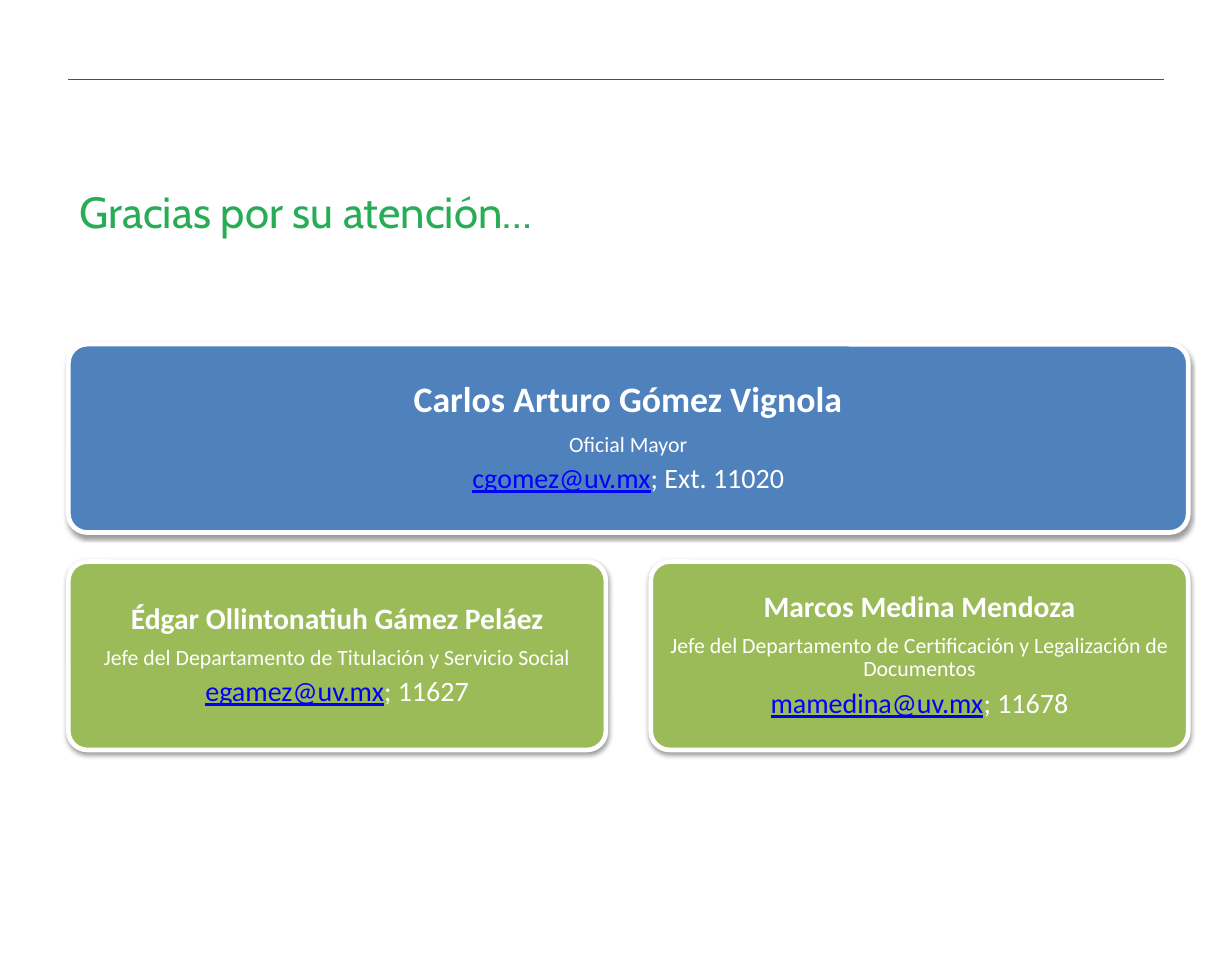
from lxml.etree import SubElement as Sub
from pptx import Presentation
from pptx.dml.color import RGBColor as Color
from pptx.enum.shapes import MSO_CONNECTOR as Link, MSO_SHAPE as Form
from pptx.enum.text import MSO_ANCHOR as Anchor, PP_ALIGN as Align
from pptx.oxml.ns import qn
from pptx.util import Pt

HUES = {"rule": "364F9D", "title": "28AD56", "chief": "4F81BD", "staff": "9BBB59",
        "white": "FFFFFF", "mail": "0000FF", "shade": "000000"}


def hue(name):
    return Color.from_string(HUES[name])


def put(item, **vals):
    for key, val in vals.items():
        setattr(item, key, val)


class Deck:
    def __init__(self, wide, high):
        self.show = Presentation()
        put(self.show, slide_width=Pt(wide), slide_height=Pt(high))
        self.slide = self.show.slides.add_slide(self.show.slide_layouts[5])
        self.shapes = self.slide.shapes

    def rule(self, left, top, right):
        line = self.shapes.add_connector(Link.STRAIGHT, Pt(left), Pt(top), Pt(right), Pt(top))
        line.line.color.rgb = hue("rule")
        line.line.width = Pt(0.75)
        Sub(line._element.spPr, qn("a:effectLst"))

    def title(self, text, left, top, wide, high):
        box = self.shapes.title
        put(box, left=Pt(left), top=Pt(top), width=Pt(wide), height=Pt(high))
        put(box.text_frame, text=text, vertical_anchor=Anchor.MIDDLE, word_wrap=True)
        para = box.text_frame.paragraphs[0]
        para.alignment = Align.LEFT
        put(para.font, name="Cabin", size=Pt(28))
        para.font.color.rgb = hue("title")

    def shade(self, card):
        card.shadow.inherit = False
        soft = Sub(card._element.spPr.find(qn("a:effectLst")), qn("a:outerShdw"),
                   blurRad=str(Pt(3.1)), dist=str(Pt(1.6)), dir="5400000", rotWithShape="0")
        tint = Sub(soft, qn("a:srgbClr"), val=HUES["shade"])
        Sub(tint, qn("a:alpha"), val="38000")

    def para(self, para, size, *runs, bold=False):
        put(para, alignment=Align.CENTER, line_spacing=0.9, space_after=Pt(0.35 * size))
        for text, tone in runs:
            run = para.add_run()
            run.text = text
            put(run.font, name="Calibri", size=Pt(size), bold=bold, underline=tone == "mail")
            run.font.color.rgb = hue(tone)

    def card(self, left, top, wide, high, fill, size, pad, name, post, mail, ext):
        card = self.shapes.add_shape(Form.ROUNDED_RECTANGLE, Pt(left), Pt(top), Pt(wide), Pt(high))
        card.adjustments[0] = 0.1
        card.fill.solid()
        card.fill.fore_color.rgb = hue(fill)
        card.line.color.rgb = hue("white")
        card.line.width = Pt(3)
        self.shade(card)
        frame = card.text_frame
        put(frame, word_wrap=True, vertical_anchor=Anchor.MIDDLE, margin_left=Pt(pad),
            margin_right=Pt(pad), margin_top=Pt(pad), margin_bottom=Pt(pad))
        self.para(frame.paragraphs[0], size, (name, "white"), bold=True)
        self.para(frame.add_paragraph(), 14, (post, "white"))
        self.para(frame.add_paragraph(), 18, (mail, "mail"), (ext, "white"))


LEFT, TOP, WIDE, HIGH = 43.92, 221.04, 719.28, 120.96
GAP, STEP = 28.8, 139.68
HALF = (WIDE - GAP) / 2
STAFF = [
    ("Édgar Ollintonatiuh Gámez Peláez", "Jefe del Departamento de Titulación y Servicio Social",
     "egamez@uv.mx", "; 11627"),
    ("Marcos Medina Mendoza", "Jefe del Departamento de Certificación y Legalización de Documentos",
     "mamedina@uv.mx", "; 11678"),
]


def main():
    deck = Deck(791.28, 612.72)
    deck.rule(LEFT, 51.12, 747.36)
    deck.title("Gracias por su atención…", LEFT, 118.8, 694.8, 33.84)
    deck.card(LEFT, TOP, WIDE, HIGH, "chief", 23, 7.2, "Carlos Arturo Gómez Vignola",
              "Oficial Mayor", "cgomez@uv.mx", "; Ext. 11020")
    for col, staff in enumerate(STAFF):
        deck.card(LEFT + col * (HALF + GAP), TOP + STEP, HALF, HIGH, "staff", 19, 5.76, *staff)
    deck.show.save("out.pptx")


if __name__ == "__main__":
    main()
